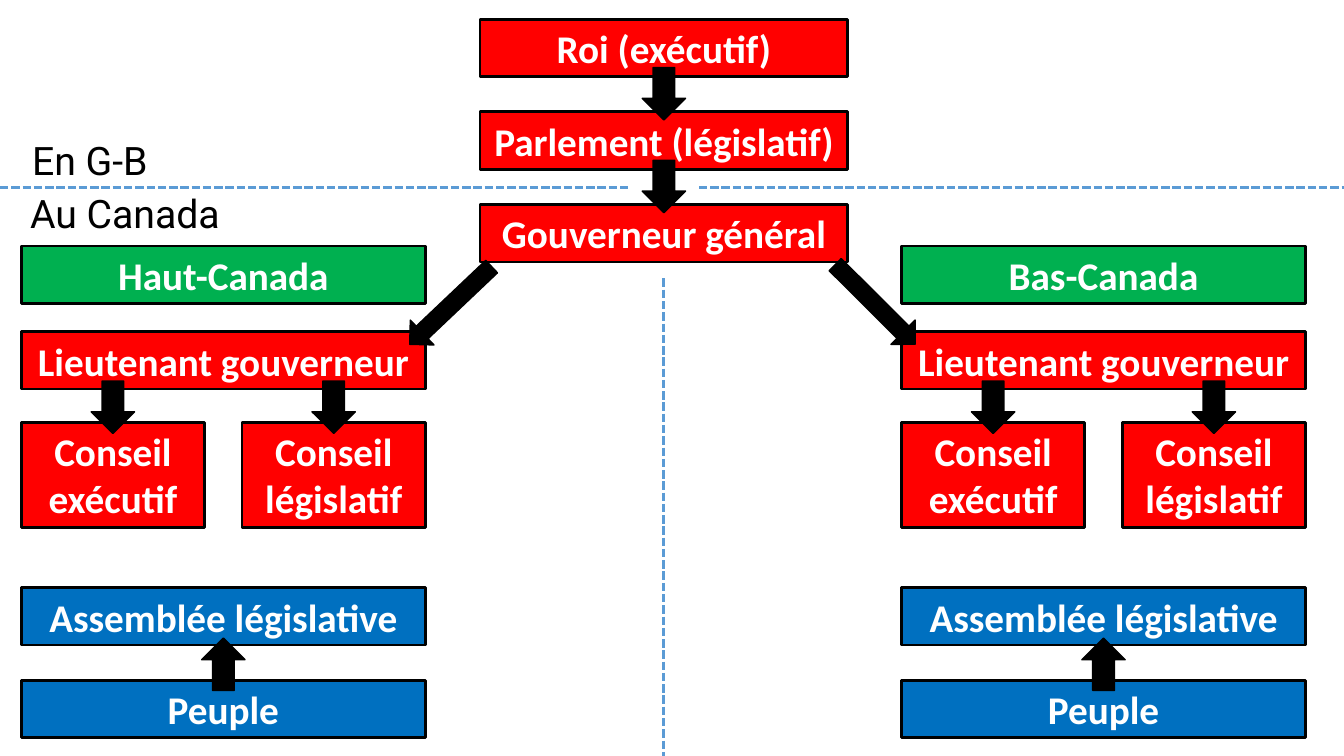
from dataclasses import dataclass
from lxml.etree import SubElement
from pptx import Presentation
from pptx.dml.color import RGBColor
from pptx.enum.dml import MSO_LINE
from pptx.enum.shapes import MSO_CONNECTOR, MSO_SHAPE
from pptx.enum.text import MSO_ANCHOR, MSO_AUTO_SIZE, PP_ALIGN
from pptx.oxml.ns import qn
from pptx.util import Inches, Pt


@dataclass(frozen=True)
class Theme:
    red: RGBColor = RGBColor(0xFF, 0x00, 0x00)
    green: RGBColor = RGBColor(0x00, 0xB0, 0x50)
    blue: RGBColor = RGBColor(0x00, 0x70, 0xC0)
    divider: RGBColor = RGBColor(0x5B, 0x9B, 0xD5)
    black: RGBColor = RGBColor(0x00, 0x00, 0x00)
    white: RGBColor = RGBColor(0xFF, 0xFF, 0xFF)
    size: Pt = Pt(28)


def add_text(sp, text, font, color, align):
    tf = sp.text_frame
    frame = {"word_wrap": True, "auto_size": MSO_AUTO_SIZE.SHAPE_TO_FIT_TEXT}
    for name, value in frame.items():
        setattr(tf, name, value)
    p = tf.paragraphs[0]
    p.alignment = align
    r = p.add_run()
    r.text = text
    for name, value in font.items():
        setattr(r.font, name, value)
    r.font.color.rgb = color


def add_block(kind, box, fill, line, width, rotation=0):
    sp = s.shapes.add_shape(kind, *map(Inches, box))
    sp.shadow.inherit = False
    sp.fill.solid()
    sp.fill.fore_color.rgb = fill
    sp.line.color.rgb = line
    sp.line.width = Pt(width)
    sp.rotation = rotation
    return sp


theme = Theme()
box_font = {"name": "Calibri", "size": theme.size, "bold": True}
region_font = {"name": "Roboto", "size": theme.size}

prs = Presentation()
prs.slide_width = Inches(13.33)
prs.slide_height = Inches(7.5)
s = prs.slides.add_slide(prs.slide_layouts[6])

dividers = [((6.58, 1.98, 6.58, 7.5), 2.47), ((0, 1.86, 13.33, 1.86), 1.84)]
for ends, gap_top in dividers:
    line = s.shapes.add_connector(MSO_CONNECTOR.STRAIGHT, *map(Inches, ends))
    line.line.color.rgb = theme.divider
    line.line.width = Pt(2)
    line.line.dash_style = MSO_LINE.SQUARE_DOT
    SubElement(line._element.spPr, qn("a:effectLst"))
    add_block(MSO_SHAPE.RECTANGLE, (6.24, gap_top, 0.69, 0.26), theme.white, theme.white, 1)

row_h, top_w, side_w, council_w = 0.57, 3.65, 4.01, 1.82
arrow_w, arrow_h = 0.43, 0.52
council_step = side_w - council_w

boxes = []
arrows = []
for i, text in enumerate(["Roi (exécutif)", "Parlement (législatif)", "Gouverneur général"]):
    boxes.append((text, 4.76, 0.19 + 0.92 * i, top_w, row_h, theme.red))
    if i < 2:
        arrows.append((6.37, 0.67 + 0.92 * i, arrow_w, arrow_h, 0))

for x, province in [(0.21, "Haut-Canada"), (8.94, "Bas-Canada")]:
    boxes += [
        (province, x, 2.44, side_w, row_h, theme.green),
        ("Lieutenant gouverneur", x, 3.29, side_w, row_h, theme.red),
        ("Assemblée législative", x, 5.83, side_w, row_h, theme.blue),
        ("Peuple", x, 6.75, side_w, row_h, theme.blue),
    ]
    for i, text in enumerate(["Conseil exécutif", "Conseil législatif"]):
        council_x = x + council_step * i
        boxes.append((text, council_x, 4.19, council_w, 1.04, theme.red))
        arrows.append((council_x + (council_w - arrow_w) / 2, 3.78, arrow_w, arrow_h, 0))
    arrows.append((x + (side_w - arrow_w) / 2, 6.33, arrow_w, arrow_h, 180))

arrows += [(8.51, 2.46, 0.34, 1.12, 314.9), (4.3, 2.47, 0.34, 1.12, 46.5)]

for text, x, y, w, h, fill in boxes:
    sp = add_block(MSO_SHAPE.RECTANGLE, (x, y, w, h), fill, theme.black, 2)
    sp.text_frame.vertical_anchor = MSO_ANCHOR.MIDDLE
    add_text(sp, text, box_font, theme.white, PP_ALIGN.CENTER)

for x, y, w, h, rotation in arrows:
    add_block(MSO_SHAPE.DOWN_ARROW, (x, y, w, h), theme.black, theme.black, 1, rotation)

for text, x, y, w in [("En G-B", 0.22, 1.3, 1.51), ("Au Canada", 0.2, 1.83, 2.26)]:
    sp = s.shapes.add_textbox(*map(Inches, (x, y, w, row_h)))
    add_text(sp, text, region_font, theme.black, PP_ALIGN.LEFT)

prs.save("out.pptx")
